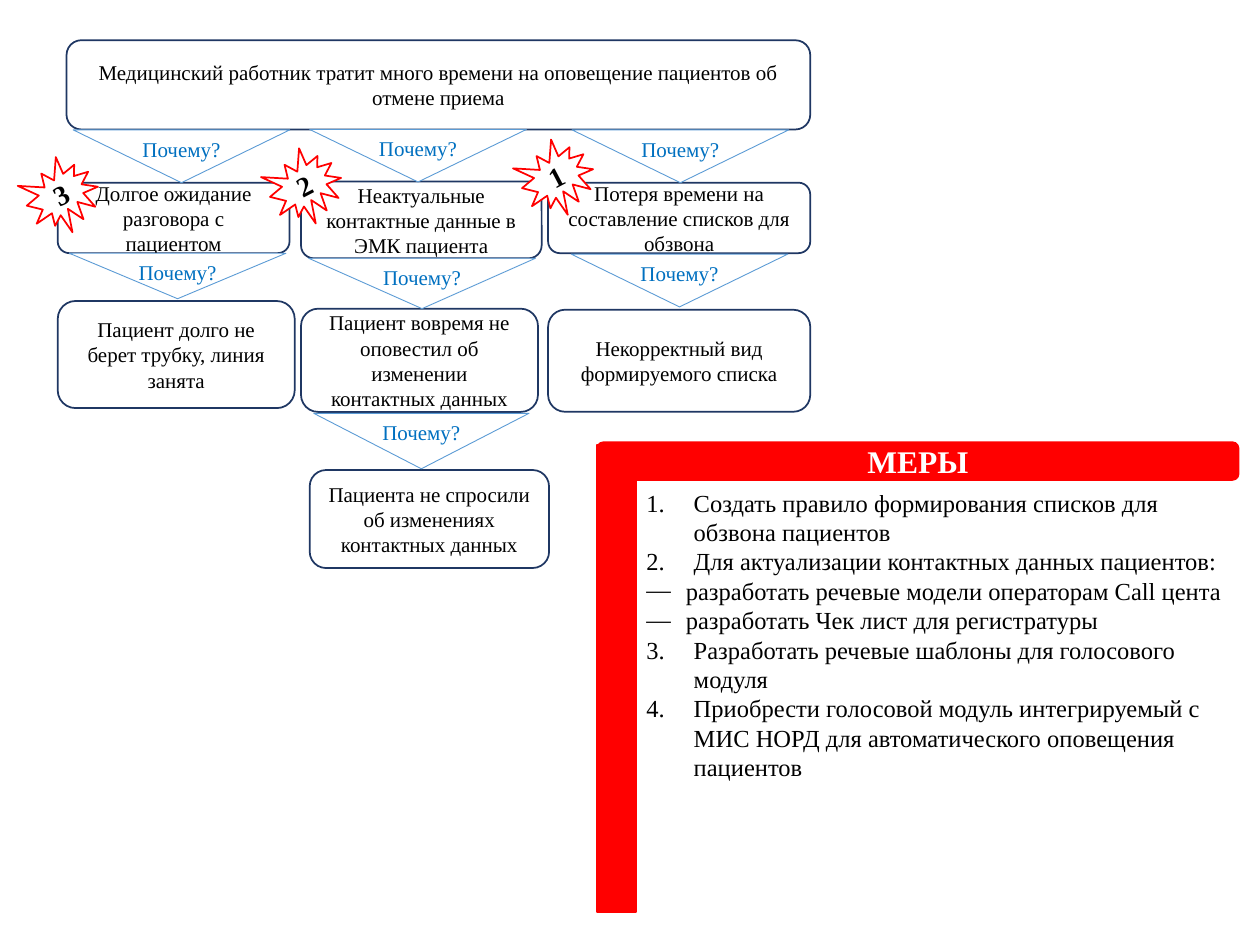
"""Build a root-cause slide: columns of "why" questions and a panel of measures."""
from lxml.etree import SubElement
from pptx import Presentation
from pptx.dml.color import RGBColor
from pptx.enum.shapes import MSO_SHAPE as Shape
from pptx.enum.text import MSO_ANCHOR as Anchor, MSO_AUTO_SIZE as AutoSize, PP_ALIGN as Align
from pptx.oxml.ns import qn
from pptx.util import Pt

COLORS = {
    "white": "FFFFFF",
    "text": "000000",
    "measure": "FF0000",
    "cause_line": "1F3763",
    "why_line": "5B9BD5",
    "why_text": "0070C0",
}

HEADING_BOX = (341.3, 252.7, 366.5, 21.6)
CAUSES = [
    ("Медицинский работник тратит много времени на оповещение пациентов об отмене приема",
     (38, 23, 425, 51)),
    ("Долгое ожидание разговора с пациентом", (33, 104.4, 132.5, 40.3)),
    ("Пациент долго не берет трубку, линия занята", (33, 172, 135.4, 61.2)),
    ("Неактуальные контактные данные в ЭМК пациента", (172, 103.7, 137.5, 43.9)),
    ("Пациент вовремя не оповестил об изменении контактных данных", (172, 176.4, 135.4, 59)),
    ("Пациента не спросили об изменениях контактных данных", (177, 268.6, 136.8, 56)),
    ("Потеря времени на составление списков для обзвона", (313.2, 104.4, 149.8, 40.3)),
    ("Некорректный вид формируемого списка", (313.2, 177, 149.8, 58.3)),
]
WHYS = [
    (41.8, 74.2, 123.8, 30.2),
    (39.6, 144.7, 123.8, 26),
    (177, 74, 123.8, 30),
    (176.4, 147.6, 129.6, 28.8),
    (179.3, 236.2, 123, 31.7),
    (326.9, 74.2, 123.8, 30.2),
    (326.4, 145.2, 123.8, 30.2),
]
PRIORITIES = [("3", 15, 90.6), ("2", 154, 85.6), ("1", 298, 80.6)]
MEASURES = [
    ("Создать правило формирования списков для обзвона пациентов", 1),
    ("Для актуализации контактных данных пациентов:", 1),
    ("разработать речевые модели операторам Call цента", None),
    ("разработать Чек лист для регистратуры", None),
    ("Разработать речевые шаблоны для голосового модуля", 3),
    ("Приобрести голосовой модуль интегрируемый с МИС НОРД для автоматического оповещения пациентов", 3),
]


class CauseSlide:
    """Hold the style and the slide, and draw each kind of element."""

    font_name = "Times New Roman"

    def __init__(self, presentation):
        """Add a title-and-content slide."""
        self.slide = presentation.slides.add_slide(presentation.slide_layouts[1])

    def color(self, name):
        """Return a palette colour."""
        return RGBColor.from_string(COLORS[name])

    def add_text(self, paragraph, text, size, color="text", bold=False, align=Align.CENTER):
        """Fill a paragraph with one styled run."""
        paragraph.alignment = align
        run = paragraph.add_run()
        run.text = text
        for name, value in {"name": self.font_name, "size": Pt(size), "bold": bold}.items():
            setattr(run.font, name, value)
        run.font.color.rgb = self.color(color)

    def block(self, preset, box, fill, line, width=1):
        """Add a filled and outlined preset shape."""
        block = self.slide.shapes.add_shape(preset, *map(Pt, box))
        block.shadow.inherit = False
        block.fill.solid()
        block.fill.fore_color.rgb = self.color(fill)
        block.line.color.rgb = self.color(line)
        block.line.width = Pt(width)
        return block

    def cause(self, text, box):
        """Add a rounded cause box."""
        cause = self.block(Shape.ROUNDED_RECTANGLE, box, "white", "cause_line")
        self.add_text(cause.text_frame.paragraphs[0], text, 12)

    def why(self, box):
        """Add a question triangle."""
        why = self.block(Shape.FLOWCHART_MERGE, box, "white", "why_line", 0.5)
        why.text_frame.vertical_anchor = Anchor.TOP
        self.add_text(why.text_frame.paragraphs[0], "Почему?", 12, "why_text")

    def priority(self, number, left, top):
        """Add a tilted starburst with a priority number."""
        burst = self.block(Shape.EXPLOSION1, (left, top, 41, 42.5), "white", "measure")
        burst.rotation = 332.4
        self.add_text(burst.text_frame.paragraphs[0], number, 16, bold=True)

    def panel(self):
        """Add the red frame of the measures."""
        self.block(Shape.ROUNDED_RECTANGLE, HEADING_BOX, "measure", "measure")
        side = self.block(Shape.CORNER, (341.3, 254.2, 31, 267), "measure", "measure")
        side.adjustments[0], side.adjustments[1] = 0.5, 0.71
        side.rotation = 180
        side.element.spPr.find(qn("a:xfrm")).set("flipH", "1")

    def place(self, holder, box, anchor):
        """Move a placeholder to the front and to its box."""
        self.slide.shapes.element.append(holder.element)
        for name, value in zip(("left", "top", "width", "height"), box):
            setattr(holder, name, Pt(value))
        frame_format = {"word_wrap": True, "auto_size": AutoSize.NONE, "vertical_anchor": anchor}
        for name, value in frame_format.items():
            setattr(holder.text_frame, name, value)
        return holder.text_frame

    def heading(self, text):
        """Put the slide title on the red bar."""
        frame = self.place(self.slide.shapes.title, HEADING_BOX, Anchor.MIDDLE)
        frame.margin_top = frame.margin_bottom = 0
        self.add_text(frame.paragraphs[0], text, 18, "white", True)

    def bullet(self, paragraph, start):
        """Number a paragraph from start, or give it a dash."""
        indent = Pt(27 if start else 22.5)
        properties = paragraph._p.get_or_add_pPr()
        properties.set("marL", str(indent))
        properties.set("indent", str(-indent))
        SubElement(properties, qn("a:buFont"), typeface=self.font_name)
        if start:
            SubElement(properties, qn("a:buAutoNum"), type="arabicPeriod", startAt=str(start))
        else:
            SubElement(properties, qn("a:buChar"), char="—")

    def measures(self, items):
        """Fill the list of measures."""
        frame = self.place(self.slide.placeholders[1], (362.2, 275, 344.9, 227.5), Anchor.TOP)
        for index, (text, start) in enumerate(items):
            paragraph = frame.add_paragraph() if index else frame.paragraphs[0]
            paragraph.space_before = Pt(0)
            self.add_text(paragraph, text, 14, align=Align.LEFT)
            self.bullet(paragraph, start)


def main():
    """Build and save the slide."""
    presentation = Presentation()
    presentation.slide_width, presentation.slide_height = Pt(720), Pt(540)
    page = CauseSlide(presentation)
    page.panel()
    page.heading("МЕРЫ")
    page.measures(MEASURES)
    for text, box in CAUSES:
        page.cause(text, box)
    for box in WHYS:
        page.why(box)
    for priority in PRIORITIES:
        page.priority(*priority)
    presentation.save("out.pptx")


if __name__ == "__main__":
    main()
